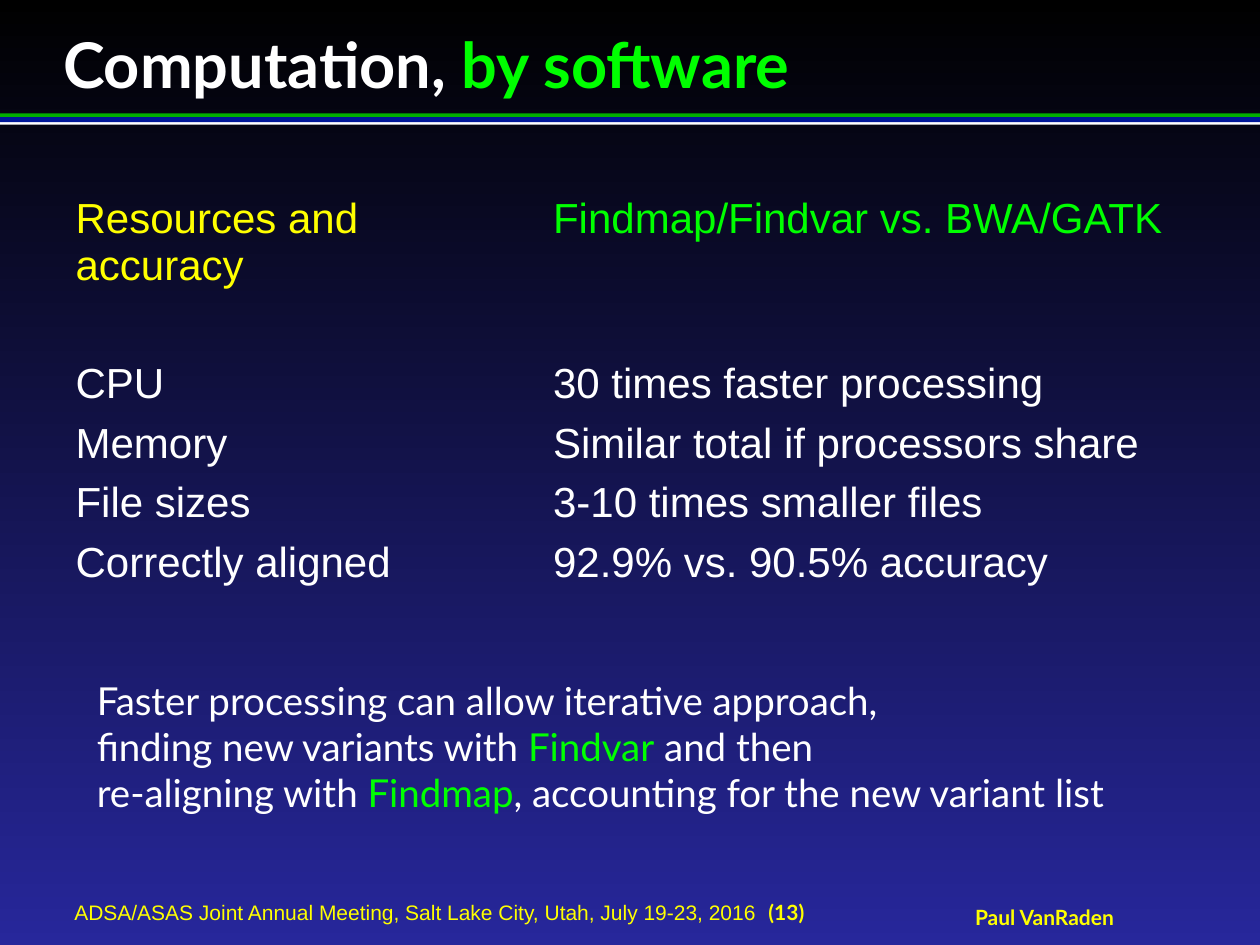
from pptx import Presentation
from pptx.dml.color import RGBColor
from pptx.enum.shapes import MSO_SHAPE
from pptx.enum.text import MSO_ANCHOR, PP_ALIGN
from pptx.util import Inches, Pt

WIDTH, HEIGHT = 10, 7.5
NO_GRID_STYLE = "{2D5ABB26-0587-4C30-8999-92F81FD0307C}"
COLORS = {
    "night": "000000",
    "dusk": "27279B",
    "green_rule": "01AF00",
    "blue_rule": "001799",
    "white": "FFFFFF",
    "yellow": "FFFF00",
    "lime": "00FF00",
}
RULES = [("green_rule", 0.9, 0.03), ("white", 0.96, 0.03), ("blue_rule", 0.93, 0.04)]
COLUMNS = [3.79, 5.2]
ROW_HEIGHT, SPACER_HEIGHT = 0.41, 0.47
COMPARISON = [
    ("Resources and accuracy", "Findmap/Findvar vs. BWA/GATK"),
    ("", ""),
    ("CPU", "30 times faster processing"),
    ("Memory", "Similar total if processors share"),
    ("File sizes", "3-10 times smaller files"),
    ("Correctly aligned", "92.9% vs. 90.5% accuracy"),
]
CONCLUSION = [
    [("Faster processing can allow iterative approach,", "white")],
    [("finding new variants with ", "white"), ("Findvar", "lime"), (" and then", "white")],
    [("re-aligning with ", "white"), ("Findmap", "lime"),
     (", accounting for the new variant list", "white")],
]


def color(name):
    """Return the named colour."""
    return RGBColor.from_string(COLORS[name])


def add_run(paragraph, text, size, tint, face="Lato", bold=False):
    """Append one formatted run to a paragraph."""
    run = paragraph.add_run()
    run.text = text
    run.font.size = Pt(size)
    run.font.name = face
    run.font.bold = bold
    run.font.color.rgb = color(tint)


def clear_insets(frame):
    """Remove the insets of a text frame and centre it vertically."""
    frame.margin_left = frame.margin_right = frame.margin_top = frame.margin_bottom = 0
    frame.vertical_anchor = MSO_ANCHOR.MIDDLE


def add_text_frame(slide, left, top, width, height):
    """Add a wrapping text box and return its text frame."""
    frame = slide.shapes.add_textbox(*map(Inches, (left, top, width, height))).text_frame
    frame.word_wrap = True
    return frame


def paint_background(slide):
    """Shade the slide from black at the top to blue at the bottom."""
    fill = slide.background.fill
    fill.gradient()
    fill.gradient_angle = 270
    for stop, tint, position in zip(fill.gradient_stops, ("night", "dusk"), (0, 1)):
        stop.color.rgb = color(tint)
        stop.position = position


def add_rule(slide, tint, top, height):
    """Add a coloured band across the slide."""
    rule = slide.shapes.add_shape(
        MSO_SHAPE.RECTANGLE, 0, Inches(top), Inches(WIDTH), Inches(height))
    rule.shadow.inherit = False
    rule.fill.solid()
    rule.fill.fore_color.rgb = color(tint)
    rule.line.fill.background()


def set_title(slide):
    """Place and fill the title."""
    title = slide.shapes.title
    title.left, title.top, title.width, title.height = map(Inches, (0.5, 0.2, 9, 0.6))
    clear_insets(title.text_frame)
    heading = title.text_frame.paragraphs[0]
    heading.alignment = PP_ALIGN.LEFT
    add_run(heading, "Computation, ", 36, "white", bold=True)
    add_run(heading, "by software", 36, "lime", bold=True)


def add_comparison(slide):
    """Add the table of resources and accuracy."""
    table = slide.shapes.add_table(
        len(COMPARISON), len(COLUMNS), Inches(0.5), Inches(1.5),
        Inches(sum(COLUMNS)), Inches(ROW_HEIGHT * len(COMPARISON))).table
    table.first_row = table.horz_banding = False
    table._tbl.tblPr[0].text = NO_GRID_STYLE
    for column, width in zip(table.columns, COLUMNS):
        column.width = Inches(width)
    for r, texts in enumerate(COMPARISON):
        table.rows[r].height = Inches(ROW_HEIGHT if any(texts) else SPACER_HEIGHT)
        tints = ("white", "white") if r else ("yellow", "lime")
        for c, (text, tint) in enumerate(zip(texts, tints)):
            cell = table.cell(r, c)
            cell.fill.background()
            if text:
                add_run(cell.text_frame.paragraphs[0], text, 24, tint, "Arial")


def add_conclusion(slide):
    """Add the closing remark below the table."""
    frame = add_text_frame(slide, 0.67, 5.32, 8.67, 1.21)
    for i, pieces in enumerate(CONCLUSION):
        line = frame.add_paragraph() if i else frame.paragraphs[0]
        for text, tint in pieces:
            add_run(line, text, 22, tint)


def add_footer(slide):
    """Add the meeting, page number and author."""
    meeting = add_text_frame(slide, 0.59, 7.14, 6.8, 0.2)
    author = add_text_frame(slide, 7.69, 7.18, 1.2, 0.2)
    for frame in (meeting, author):
        clear_insets(frame)
    line = meeting.paragraphs[0]
    add_run(line, "ADSA/ASAS Joint Annual Meeting, Salt Lake City, Utah, July 19-23, 2016  ",
            12, "yellow", "Arial")
    add_run(line, "(13)", 12, "yellow", bold=True)
    author.paragraphs[0].alignment = PP_ALIGN.CENTER
    add_run(author.paragraphs[0], "Paul VanRaden", 12, "yellow", bold=True)


def main():
    """Build and save the slide."""
    deck = Presentation()
    deck.slide_width, deck.slide_height = Inches(WIDTH), Inches(HEIGHT)
    slide = deck.slides.add_slide(deck.slide_layouts[5])
    paint_background(slide)
    for rule in RULES:
        add_rule(slide, *rule)
    set_title(slide)
    add_comparison(slide)
    add_conclusion(slide)
    add_footer(slide)
    deck.save("out.pptx")


if __name__ == "__main__":
    main()
